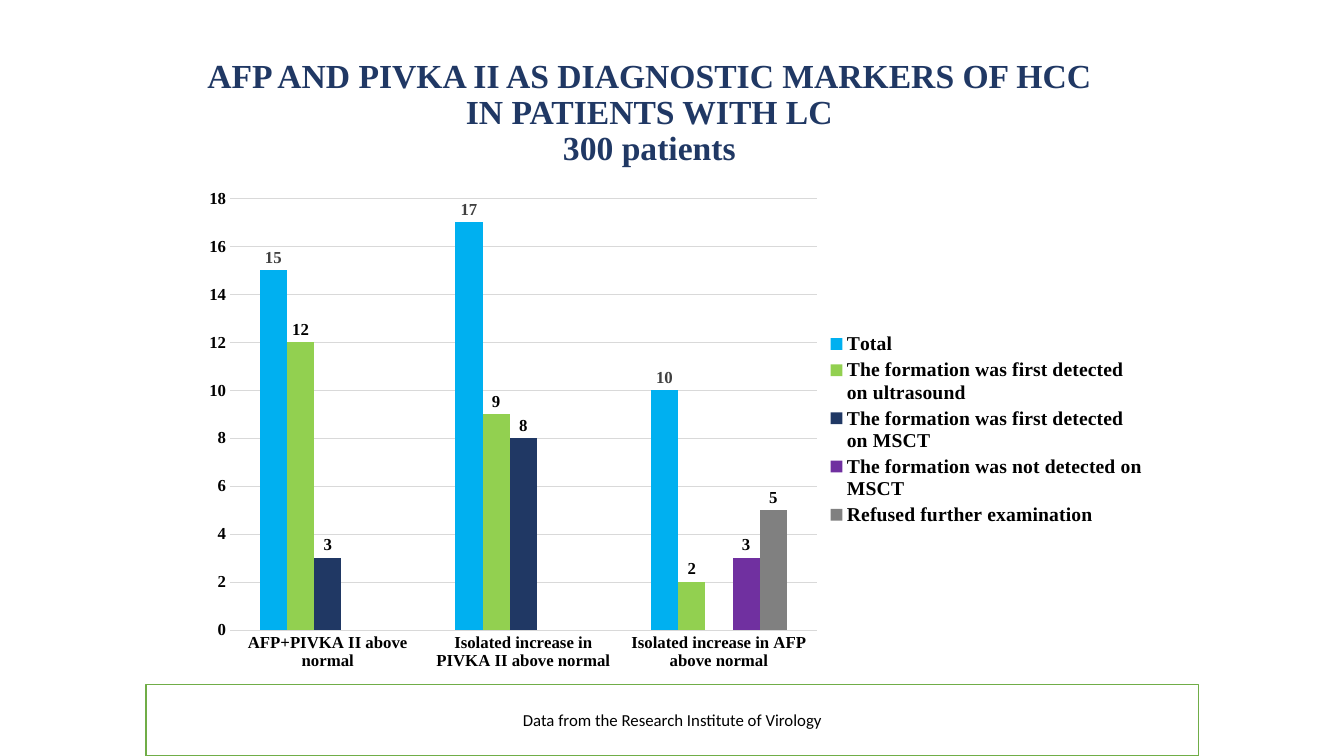
from lxml.etree import SubElement as Sub
from pptx import Presentation
from pptx.chart.data import CategoryChartData as Data
from pptx.dml.color import RGBColor
from pptx.enum.chart import XL_CHART_TYPE as Kind
from pptx.enum.chart import XL_LABEL_POSITION as Spot
from pptx.enum.chart import XL_LEGEND_POSITION as Side
from pptx.enum.chart import XL_TICK_MARK as Tick
from pptx.enum.shapes import MSO_SHAPE as Shape
from pptx.enum.text import MSO_ANCHOR as Anchor
from pptx.enum.text import MSO_AUTO_SIZE as Fit
from pptx.enum.text import PP_ALIGN as Align
from pptx.oxml.ns import qn
from pptx.util import Pt

PX = 9144  # 100 px to the inch
SERIF = "Times New Roman"
SANS = "Calibri"

NAVY = RGBColor(0x20, 0x38, 0x64)
BLUE = RGBColor(0x00, 0xB0, 0xF0)
LIME = RGBColor(0x92, 0xD0, 0x50)
PURPLE = RGBColor(0x70, 0x30, 0xA0)
GREY = RGBColor(0x80, 0x80, 0x80)
DARK = RGBColor(0x40, 0x40, 0x40)
PALE = RGBColor(0xD9, 0xD9, 0xD9)
GREEN = RGBColor(0x70, 0xAD, 0x47)
WHITE = RGBColor(0xFF, 0xFF, 0xFF)
BLACK = RGBColor(0x00, 0x00, 0x00)

GROUPS = [
    "AFP+PIVKA II above normal",
    "Isolated increase in PIVKA II above normal",
    "Isolated increase in AFP above normal",
]
SERIES = [
    ("Total", (15, 17, 10), BLUE, DARK),
    ("The formation was first detected on ultrasound", (12, 9, 2), LIME, BLACK),
    ("The formation was first detected on MSCT", (3, 8, None), NAVY, BLACK),
    ("The formation was not detected on MSCT", (None, None, 3), PURPLE, BLACK),
    ("Refused further examination", (None, None, 5), GREY, BLACK),
]


def box(*sides):
    return [side * PX for side in sides]


def style(font, size, color=BLACK, face=SERIF, bold=True):
    font.size = Pt(size)
    font.name = face
    font.bold = bold
    font.color.rgb = color


def write(shape, text, size, color=BLACK, face=SERIF, bold=True, space=1.0):
    frame = shape.text_frame
    frame.word_wrap = True
    frame.auto_size = Fit.NONE
    frame.vertical_anchor = Anchor.MIDDLE
    para = frame.paragraphs[0]
    para.text = text
    para.alignment = Align.CENTER
    para.line_spacing = space
    for run in para.runs:
        style(run.font, size, color, face, bold)


def place(part, index, inner=False, **sizes):
    """Fix a chart part at fractions x, y, w and h of the chart."""
    for old in part.findall(qn("c:layout")):
        part.remove(old)
    layout = Sub(part, qn("c:layout"))
    part.insert(index, layout)
    manual = Sub(layout, qn("c:manualLayout"))
    if inner:
        Sub(manual, qn("c:layoutTarget"), val="inner")
    for mode in ("xMode", "yMode"):
        Sub(manual, qn("c:" + mode), val="edge")
    for key, value in sizes.items():
        Sub(manual, qn("c:" + key), val=str(value))


def add_title(slide):
    title = slide.shapes.title
    title.left, title.top, title.width, title.height = box(190, 40, 908, 145)
    text = ("AFP AND PIVKA II AS DIAGNOSTIC MARKERS OF HCC "
            "IN PATIENTS WITH LC\v300 patients")
    write(title, text, 24, color=NAVY, space=0.9)


def format_axes(chart):
    groups, values = chart.category_axis, chart.value_axis
    for axis in (groups, values):
        axis.major_tick_mark = axis.minor_tick_mark = Tick.NONE
        style(axis.tick_labels.font, 12)
    values.minimum_scale, values.maximum_scale = 0, 18
    values.major_unit = 2
    values.has_major_gridlines = True
    values.format.line.fill.background()
    for line in (groups.format.line, values.major_gridlines.format.line):
        line.color.rgb = PALE
        line.width = Pt(0.75)


def add_bars(slide):
    data = Data()
    data.categories = GROUPS
    for name, values, *_ in SERIES:
        data.add_series(name, values)
    frame = slide.shapes.add_chart(
        Kind.COLUMN_CLUSTERED, *box(190, 177, 954, 498), data)
    chart = frame.chart
    chart.has_title = False
    style(chart.font, 10, face=SANS, bold=False)
    format_axes(chart)

    plot = chart.plots[0]
    plot.gap_width = 219
    plot.overlap = 0
    plot.vary_by_categories = False
    for bars, (_, _, color, ink) in zip(plot.series, SERIES):
        bars.format.fill.solid()
        bars.format.fill.fore_color.rgb = color
        labels = bars.data_labels
        labels.show_value = True
        labels.position = Spot.OUTSIDE_END
        style(labels.font, 12, color=ink)

    chart.has_legend = True
    legend = chart.legend
    legend.position = Side.RIGHT
    legend.include_in_layout = False
    style(legend.font, 14)
    area = chart.element.find(".//" + qn("c:plotArea")) if hasattr(
        chart, "element") else chart._chartSpace.chart.plotArea
    place(area, 0, inner=True, x=0.04, y=0.04, w=0.61, h=0.86)
    place(legend._element, 1, x=0.67, y=0.3, w=0.33, h=0.4)


def add_source(slide):
    rect = slide.shapes.add_shape(Shape.RECTANGLE, *box(145, 679, 1044, 71))
    rect.shadow.inherit = False
    rect.fill.solid()
    rect.fill.fore_color.rgb = WHITE
    rect.line.color.rgb = GREEN
    rect.line.width = Pt(1)
    write(rect, "Data from the Research Institute of Virology", 12,
          face=SANS, bold=False)


def main():
    deck = Presentation()
    deck.slide_width, deck.slide_height = box(1333, 750)
    slide = deck.slides.add_slide(deck.slide_layouts[5])
    add_title(slide)
    add_bars(slide)
    add_source(slide)
    deck.save("out.pptx")


if __name__ == "__main__":
    main()
